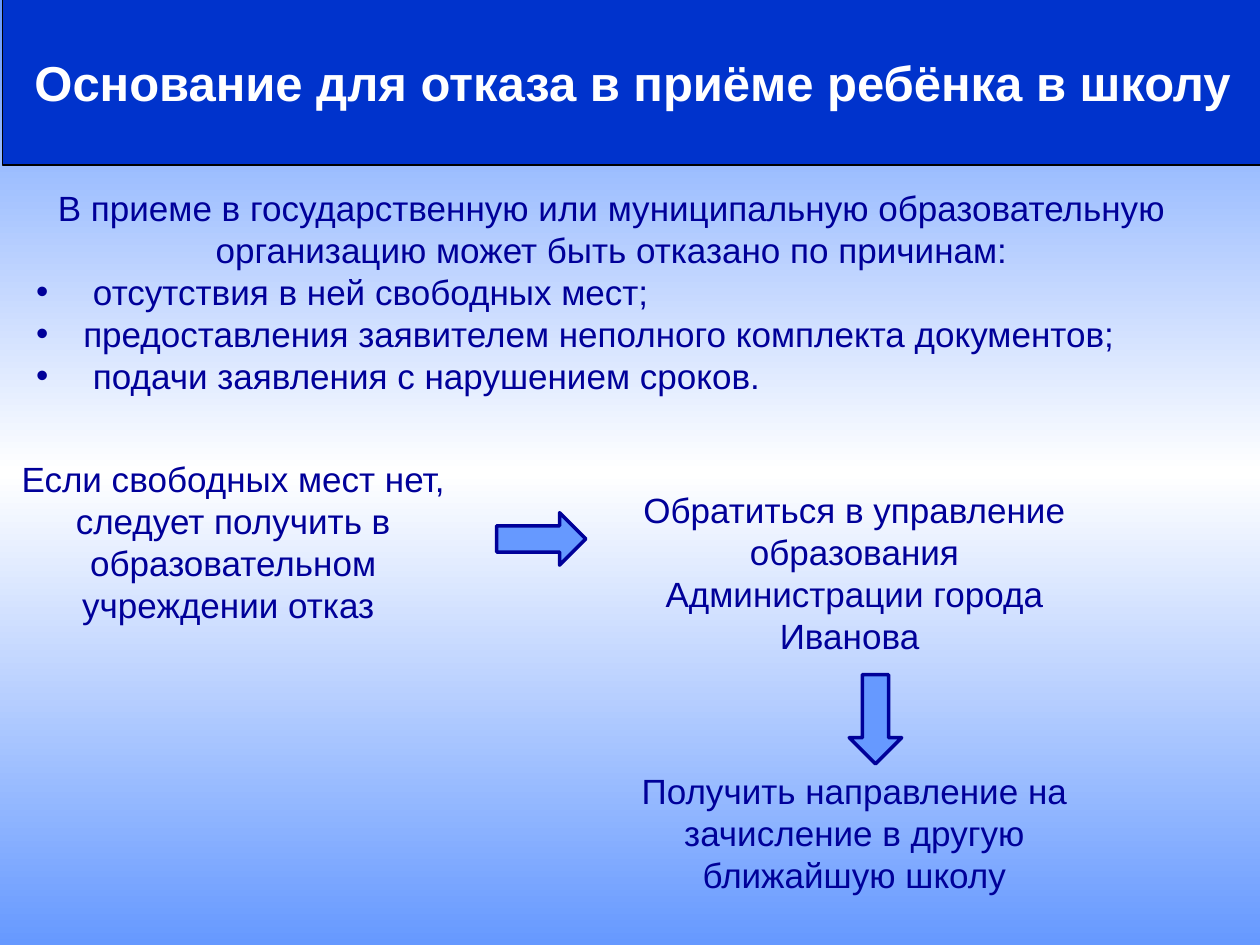
from copy import deepcopy

from lxml.etree import SubElement
from pptx import Presentation
from pptx.dml.color import RGBColor
from pptx.enum.shapes import MSO_SHAPE as SHAPE
from pptx.enum.text import MSO_ANCHOR as ANCHOR, MSO_AUTO_SIZE as AUTO, PP_ALIGN as ALIGN
from pptx.oxml.ns import qn
from pptx.util import Pt

NAVY, BLUE, SKY, WHITE, BLACK = "000099", "0033CC", "6699FF", "FFFFFF", "000000"
INDENT = 27


def rgb(value):
    """Turn a hex string into a colour."""
    return RGBColor.from_string(value)


def place(shape, box):
    """Move a shape to a box of left, top, width and height in points."""
    shape.left, shape.top, shape.width, shape.height = (Pt(v) for v in box)


def paint(shape, fill, line, weight):
    """Set the fill and outline of a shape."""
    shape.fill.solid()
    shape.fill.fore_color.rgb = rgb(fill)
    shape.line.color.rgb = rgb(line)
    shape.line.width = Pt(weight)


def add_run(p, text, size, color, bold=False):
    """Add one formatted run to a paragraph."""
    r = p.add_run()
    r.text = text
    r.font.name, r.font.size, r.font.bold = "Arial", Pt(size), bold
    r.font.color.rgb = rgb(color)


def set_bullet(p):
    """Give a paragraph a hanging bullet."""
    pPr = p._p.get_or_add_pPr()
    pPr.set("marL", str(Pt(INDENT)))
    pPr.set("indent", str(-Pt(INDENT)))
    SubElement(pPr, qn("a:buFont")).set("typeface", "Arial")
    SubElement(pPr, qn("a:buChar")).set("char", "•")


def set_background(s):
    """Fill the slide with a vertical blue, white and blue gradient."""
    fill = s.background.fill
    fill.gradient()
    fill.gradient_angle = 270
    stops = s.element.find(".//" + qn("a:gsLst"))
    stops.append(deepcopy(stops[-1]))
    for stop, position, color in zip(fill.gradient_stops, (0, 0.5, 1), (SKY, WHITE, SKY)):
        stop.position = position
        stop.color.rgb = rgb(color)


def add_title(s, box, text):
    """Turn the title placeholder into a banner."""
    title = s.shapes.title
    place(title, box)
    paint(title, BLUE, BLACK, 0.75)
    tf = title.text_frame
    tf.auto_size, tf.word_wrap, tf.vertical_anchor = AUTO.NONE, False, ANCHOR.MIDDLE
    p = tf.paragraphs[0]
    p.alignment = ALIGN.CENTER
    add_run(p, text, 28, WHITE, True)


def add_text(s, box, lead, bullets=()):
    """Add a centred lead paragraph and any bullets below it."""
    tf = s.shapes.add_textbox(*(Pt(v) for v in box)).text_frame
    tf.word_wrap, tf.auto_size = True, AUTO.SHAPE_TO_FIT_TEXT
    p = tf.paragraphs[0]
    p.alignment = ALIGN.CENTER
    add_run(p, lead, 20, NAVY)
    for text in bullets:
        p = tf.add_paragraph()
        p.alignment = ALIGN.LEFT
        set_bullet(p)
        add_run(p, text, 20, NAVY)


def add_arrow(s, box, rotation=0):
    """Add a block arrow, turned clockwise by the rotation."""
    arrow = s.shapes.add_shape(SHAPE.RIGHT_ARROW, *(Pt(v) for v in box))
    arrow.shadow.inherit = False
    arrow.rotation = rotation
    paint(arrow, SKY, NAVY, 2)


def add_steps(s, left, top):
    """Add the steps after a refusal and the arrows between them."""
    width, right = 283.5, left + 355
    add_text(s, (left, top, width, 104.5),
             "Если свободных мест нет, следует получить в образовательном учреждении отказ ")
    add_arrow(s, (left + 292.25, top + 35.25, 51, 30))
    add_text(s, (right, top + 18, width, 104.5),
             "Обратиться в управление образования Администрации города Иванова ")
    add_arrow(s, (right + 128.25, top + 138.25, 51, 30), 90)
    add_text(s, (right, top + 178.5, width, 80),
             "Получить направление на зачисление в другую ближайшую школу")


def main():
    """Build and save the slide."""
    prs = Presentation()
    prs.slide_width, prs.slide_height = Pt(720), Pt(540)
    s = prs.slides.add_slide(prs.slide_layouts[5])
    set_background(s)
    add_title(s, (1.5, -0.75, 720, 95), "Основание для отказа в приёме ребёнка в школу")
    add_text(s, (13.5, 103, 672, 128),
             "В приеме в государственную или муниципальную образовательную "
             "организацию может быть отказано по причинам:",
             (" отсутствия в ней свободных мест;",
              "предоставления заявителем неполного комплекта документов;",
              " подачи заявления с нарушением сроков."))
    add_steps(s, -8.5, 257.75)
    prs.save("out.pptx")


if __name__ == "__main__":
    main()
